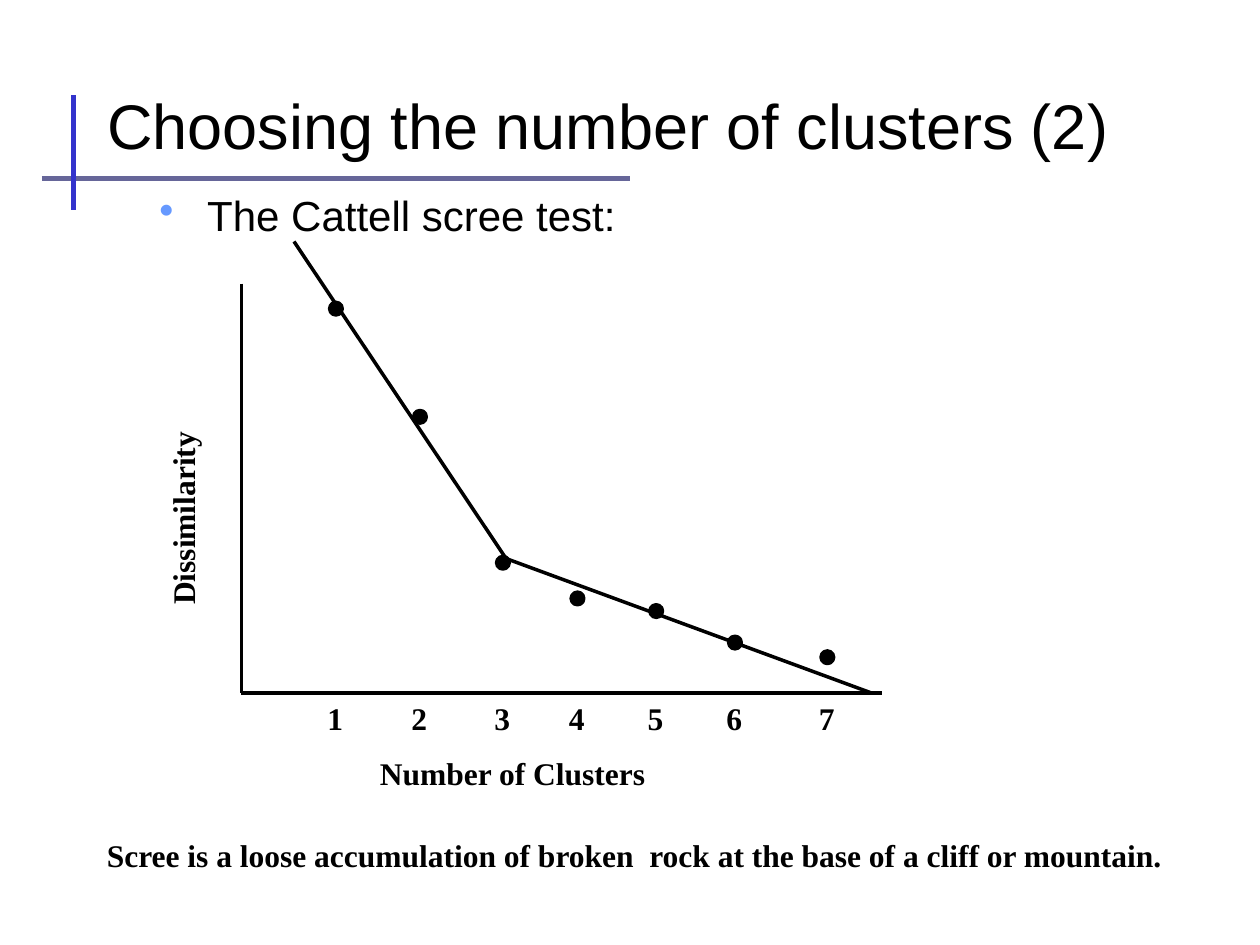
"""Build a slide that explains the Cattell scree test with a hand-drawn plot."""
from typing import NamedTuple

from lxml import etree
from pptx import Presentation
from pptx.dml.color import RGBColor
from pptx.enum.shapes import MSO_CONNECTOR, MSO_SHAPE
from pptx.enum.text import MSO_ANCHOR, MSO_AUTO_SIZE, PP_ALIGN
from pptx.oxml.ns import qn
from pptx.util import Inches, Pt

STRAIGHT, OVAL = MSO_CONNECTOR.STRAIGHT, MSO_SHAPE.OVAL
BOTTOM, TOP, LEFT = MSO_ANCHOR.BOTTOM, MSO_ANCHOR.TOP, PP_ALIGN.LEFT
GROW, FIXED = MSO_AUTO_SIZE.SHAPE_TO_FIT_TEXT, MSO_AUTO_SIZE.NONE
WIDTH, HEIGHT = Inches(10), Inches(7.5)
COLUMNS, ROWS = 120, 90
BLACK, SLATE, BLUE, SKY = "000000", "666699", "3333CC", "6699FF"
SANS, SERIF = "Arial", "Times New Roman"
AXIS_COLUMN, AXIS_ROW = 23, 66
DOT_SIZE, LABEL_WIDTH, LABEL_HEIGHT = 1.2, 4, 4.8


class Area(NamedTuple):
    column: float
    row: float
    columns: float
    rows: float


class Point(NamedTuple):
    column: float
    row: float


class Stroke(NamedTuple):
    start: Point
    end: Point
    color: str = BLACK
    weight: float = 2


ORIGIN, ELBOW = Point(AXIS_COLUMN, AXIS_ROW), Point(48.2, 53.2)
RULES = [
    Stroke(Point(4, 17), Point(60, 17), SLATE, 3),
    Stroke(Point(7, 20), Point(7, 9), BLUE, 3),
]
PLOT_LINES = [
    Stroke(Point(AXIS_COLUMN, 27), ORIGIN),
    Stroke(ORIGIN, Point(84, AXIS_ROW)),
    Stroke(Point(28, 23), ELBOW),
    Stroke(ELBOW, Point(83, AXIS_ROW)),
]
DOTS = [
    Point(32, 29.4), Point(40, 39.7), Point(47.9, 53.6), Point(55, 57),
    Point(62.5, 58.2), Point(70, 61.2), Point(78.8, 62.6),
]


def across(columns: float) -> int:
    """Turn grid columns into a length."""
    return round(WIDTH * columns / COLUMNS)


def down(rows: float) -> int:
    """Turn grid rows into a length."""
    return round(HEIGHT * rows / ROWS)


def place(area: Area) -> tuple[int, int, int, int]:
    """Turn a grid area into left, top, width and height."""
    return across(area.column), down(area.row), across(area.columns), down(area.rows)


def paint(target, color: str) -> None:
    """Give a fill or line one solid colour."""
    target.solid()
    target.fore_color.rgb = RGBColor.from_string(color)


def write(box, text: str, *, size: float = 18, font: str = SERIF, bold: bool = True,
          anchor=TOP, fit=GROW, bullet: str = "", vertical: str = "") -> None:
    """Put one formatted paragraph into a shape."""
    frame = box.text_frame
    frame.word_wrap, frame.auto_size, frame.vertical_anchor = True, fit, anchor
    if vertical:
        box.element.txBody.bodyPr.set("vert", vertical)
    para = frame.paragraphs[0]
    para.alignment = LEFT
    if bullet:
        para.line_spacing = 0.9
        properties = para._p.get_or_add_pPr()
        properties.set("marL", str(Inches(0.38)))
        properties.set("indent", str(-Inches(0.38)))
        tint = etree.SubElement(properties, qn("a:buClr"))
        etree.SubElement(tint, qn("a:srgbClr")).set("val", SKY)
        etree.SubElement(properties, qn("a:buChar")).set("char", bullet)
    span = para.add_run()
    span.text = text
    span.font.size, span.font.name, span.font.bold = Pt(size), font, bold
    paint(span.font.fill, BLACK)


def add_text(page, area: Area, text: str, **style) -> None:
    """Add a text box on the grid."""
    write(page.shapes.add_textbox(*place(area)), text, **style)


def add_stroke(page, stroke: Stroke) -> None:
    """Add a straight line without a shadow."""
    start, end = stroke.start, stroke.end
    line = page.shapes.add_connector(STRAIGHT, across(start.column), down(start.row),
                                     across(end.column), down(end.row))
    paint(line.line.fill, stroke.color)
    line.line.width = Pt(stroke.weight)
    etree.SubElement(line.element.spPr, qn("a:effectLst"))


def add_dot(page, center: Point) -> None:
    """Add a black data point around its centre."""
    area = Area(center.column - DOT_SIZE / 2, center.row - DOT_SIZE / 2, DOT_SIZE, DOT_SIZE)
    dot = page.shapes.add_shape(OVAL, *place(area))
    dot.shadow.inherit = False
    paint(dot.fill, BLACK)
    paint(dot.line.fill, BLACK)
    dot.line.width = Pt(2)


def main() -> None:
    """Build and save the slide."""
    deck = Presentation()
    deck.slide_width, deck.slide_height = WIDTH, HEIGHT
    page = deck.slides.add_slide(deck.slide_layouts.get_by_name("Title Only"))
    title = page.shapes.title
    title.left, title.top, title.width, title.height = place(Area(9, 3, 102, 13))
    write(title, "Choosing the number of clusters (2)", size=36, font=SANS,
          bold=False, anchor=BOTTOM, fit=FIXED)
    for stroke in RULES:
        add_stroke(page, stroke)
    add_text(page, Area(14, 18, 84, 62), "The Cattell scree test:", size=24,
             font=SANS, bold=False, fit=FIXED, bullet="•")
    add_text(page, Area(15, 39, 6, 19.8), "Dissimilarity", vertical="vert270")
    add_text(page, Area(35, 71.2, 29.5, LABEL_HEIGHT), "Number of Clusters")
    for number, dot in enumerate(DOTS, start=1):
        add_text(page, Area(dot.column - LABEL_WIDTH / 2, AXIS_ROW, LABEL_WIDTH, LABEL_HEIGHT),
                 str(number))
        add_dot(page, dot)
    for stroke in PLOT_LINES:
        add_stroke(page, stroke)
    add_text(page, Area(9, 79, 103, LABEL_HEIGHT),
             "Scree is a loose accumulation of broken  rock at the base of a cliff or mountain.")
    deck.save("out.pptx")


if __name__ == "__main__":
    main()
